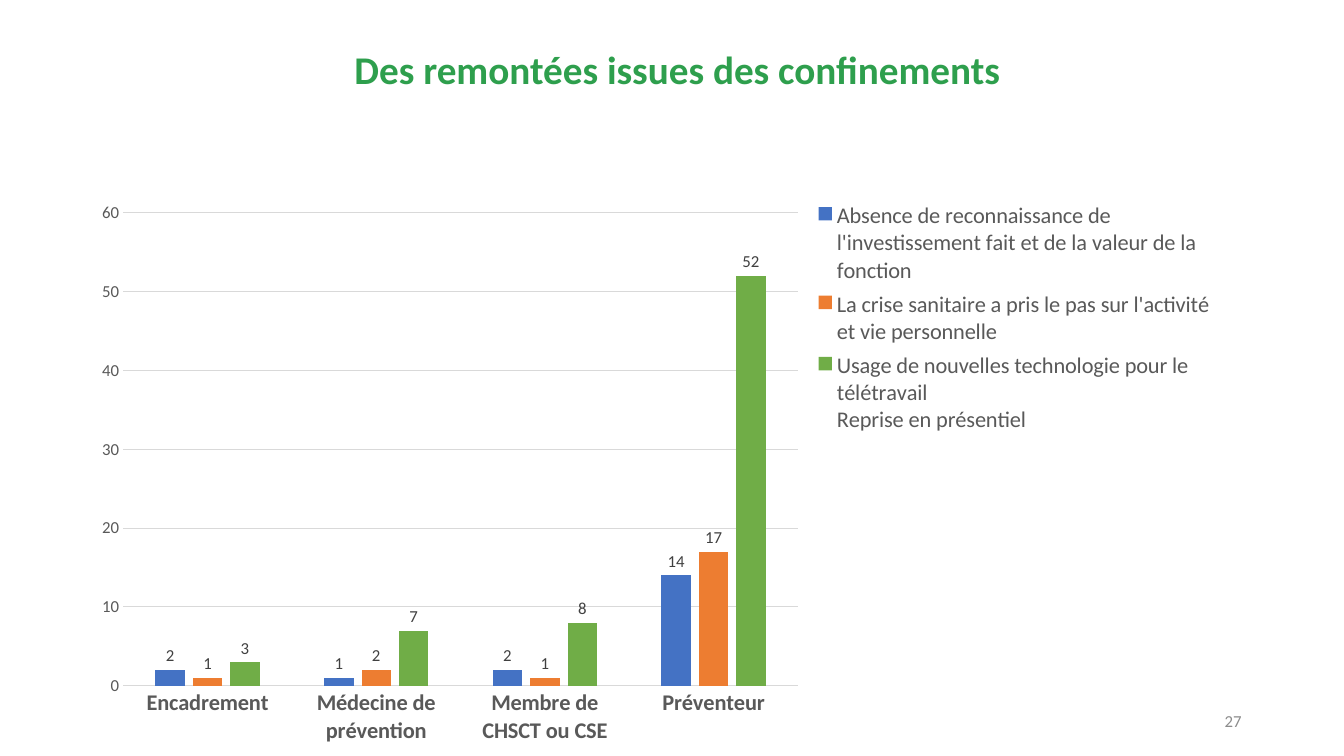
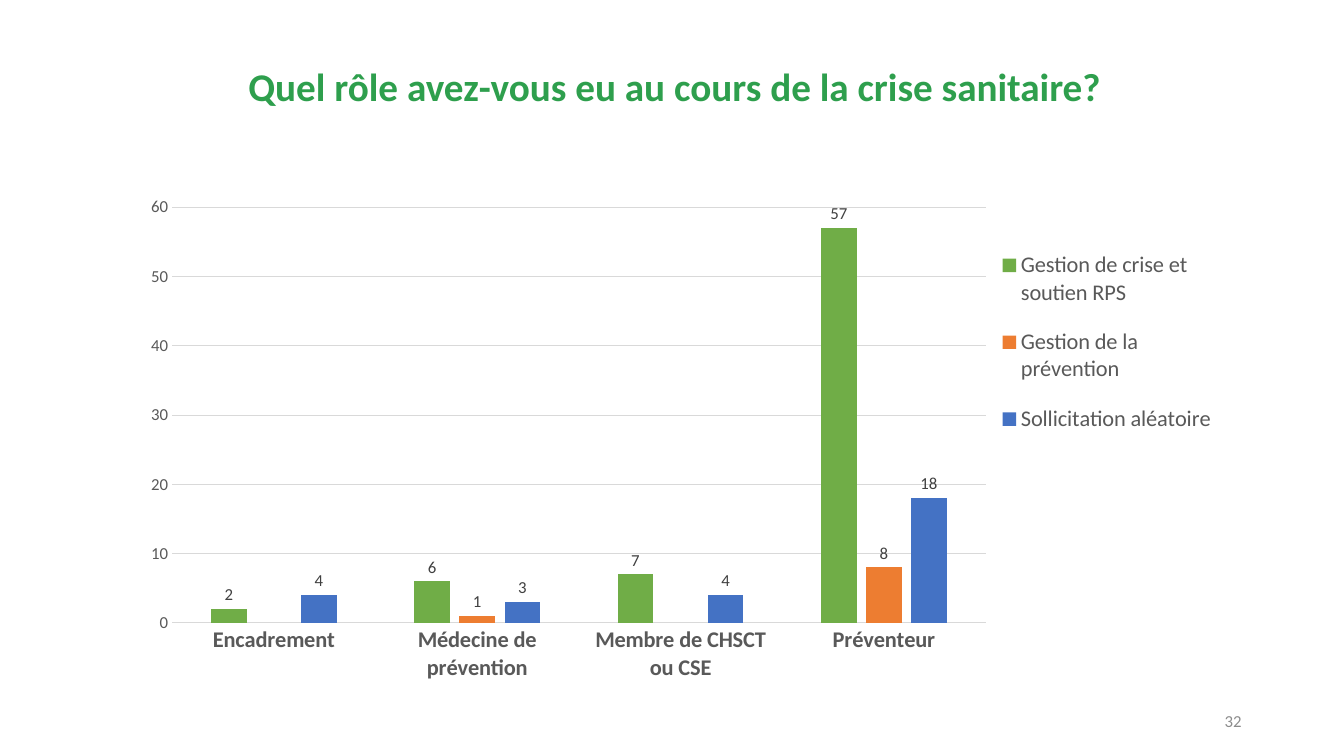
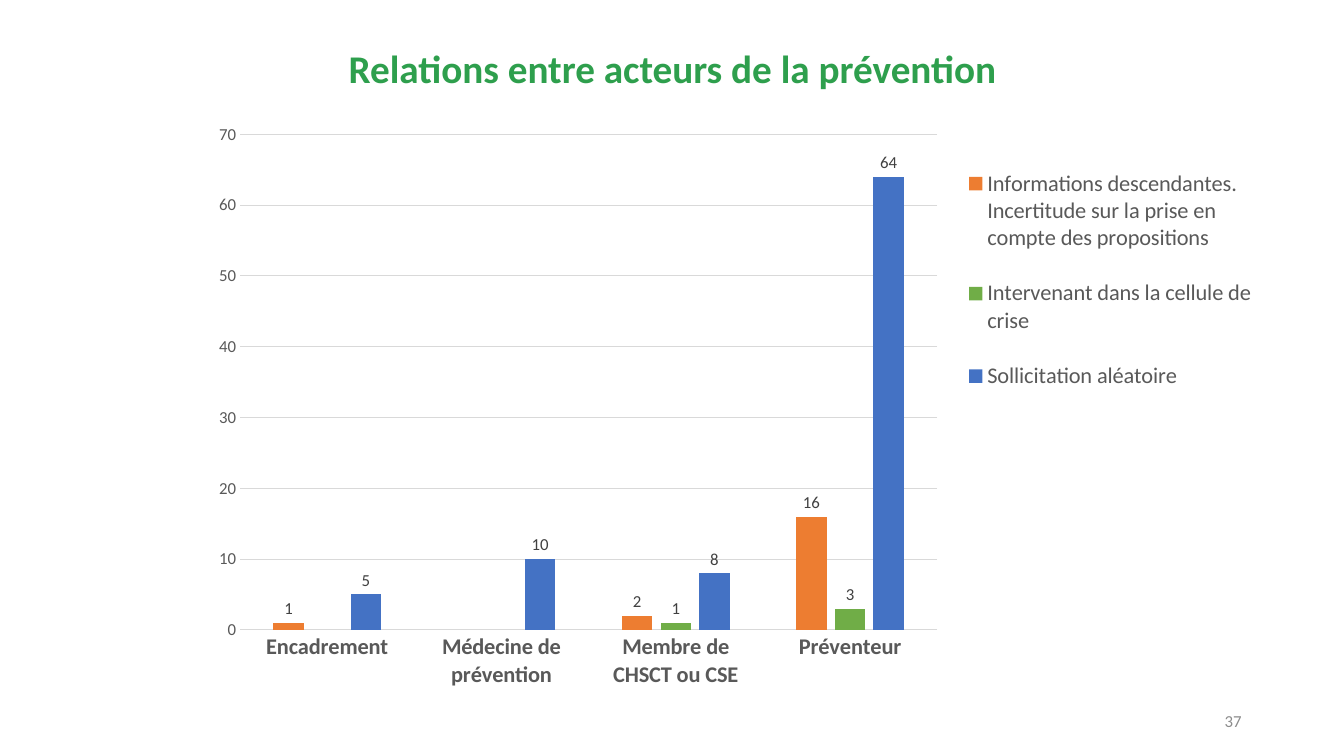
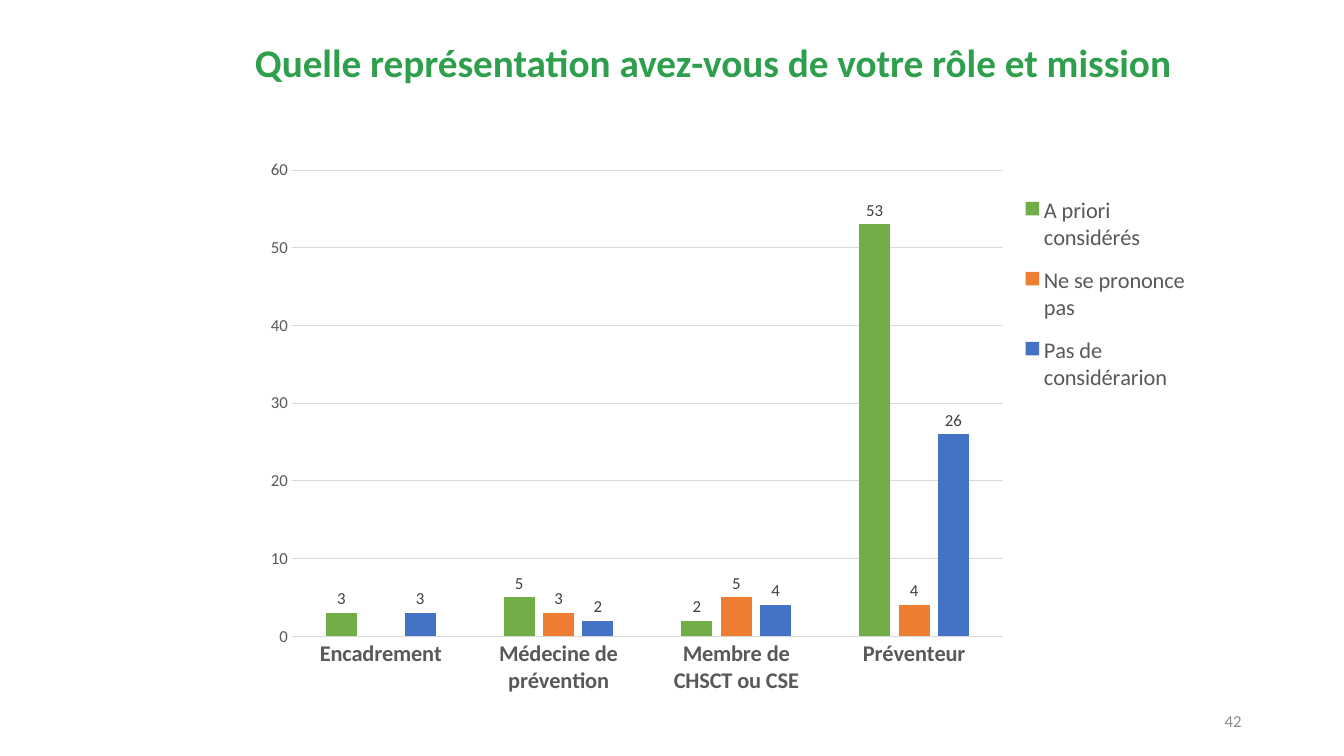
from dataclasses import dataclass

from lxml import etree
from pptx import Presentation
from pptx.chart.data import CategoryChartData
from pptx.dml.color import RGBColor
from pptx.enum.chart import XL_CHART_TYPE as ChartType
from pptx.enum.chart import XL_LABEL_POSITION as LabelPosition
from pptx.enum.chart import XL_LEGEND_POSITION as LegendPosition
from pptx.enum.chart import XL_TICK_MARK as TickMark
from pptx.enum.text import MSO_ANCHOR as Anchor
from pptx.enum.text import MSO_AUTO_SIZE as AutoSize
from pptx.enum.text import PP_ALIGN as Align
from pptx.oxml.ns import qn
from pptx.util import Pt


# Theme: colours, font and type sizes
@dataclass(frozen=True)
class Theme:
    font: str = "Calibri"
    title: str = "2E9F4D"
    text: str = "595959"
    label: str = "404040"
    number: str = "8C8C8C"
    rule: str = "D9D9D9"
    blue: str = "4472C4"
    orange: str = "ED7D31"
    green: str = "70AD47"
    title_size: int = 28
    large_size: int = 16
    small_size: int = 12
    rule_width: float = 0.75


THEME = Theme()
CATEGORIES = ("Encadrement", "Médecine de prévention",
              "Membre de CHSCT ou CSE", "Préventeur")
NUMBER_BOX = (678, 500.5, 216, 29)


class Deck:
    """Holds the style and the slide being built."""

    def __init__(self, theme):
        self.theme = theme
        self.presentation = Presentation()
        self.presentation.slide_width = Pt(960)
        self.presentation.slide_height = Pt(540)
        self.slide = None

    def add_slide(self):
        layout = self.presentation.slide_layouts[5]
        self.slide = self.presentation.slides.add_slide(layout)

    def style_font(self, font, size, color, bold=False):
        font.name = self.theme.font
        font.size = Pt(size)
        font.bold = bold
        font.color.rgb = RGBColor.from_string(color)

    def style_line(self, line):
        line.color.rgb = RGBColor.from_string(self.theme.rule)
        line.width = Pt(self.theme.rule_width)

    def set_text(self, shape, text, align, size, color, bold=False):
        frame = shape.text_frame
        frame.text = text
        frame.word_wrap = True
        frame.auto_size = AutoSize.NONE
        frame.vertical_anchor = Anchor.MIDDLE
        paragraph = frame.paragraphs[0]
        paragraph.alignment = align
        self.style_font(paragraph.runs[0].font, size, color, bold)
        return paragraph

    def title(self, text, box):
        shape = self.slide.shapes.title
        shape.left, shape.top, shape.width, shape.height = map(Pt, box)
        paragraph = self.set_text(shape, text, Align.CENTER,
                                  self.theme.title_size, self.theme.title,
                                  True)
        paragraph.line_spacing = 0.9

    def number(self, value):
        shape = self.slide.shapes.add_textbox(*map(Pt, NUMBER_BOX))
        self.set_text(shape, str(value), Align.RIGHT,
                      self.theme.small_size, self.theme.number)

    def place(self, follower, box, chart_box, inner=False):
        """Set a manual layout, as fractions of the chart, before follower."""
        parent = follower.getparent()
        for old in parent.findall(qn("c:layout")):
            parent.remove(old)
        layout = etree.Element(qn("c:layout"))
        manual = etree.SubElement(layout, qn("c:manualLayout"))
        left, top, width, height = chart_box
        settings = [("layoutTarget", "inner")] if inner else []
        settings += [("xMode", "edge"), ("yMode", "edge"),
                     ("x", (box[0] - left) / width),
                     ("y", (box[1] - top) / height),
                     ("w", box[2] / width), ("h", box[3] / height)]
        for tag, value in settings:
            etree.SubElement(manual, qn(f"c:{tag}")).set("val", str(value))
        follower.addprevious(layout)

    def column_chart(self, box, plot_box, legend_box, series):
        theme = self.theme
        data = CategoryChartData()
        data.categories = CATEGORIES
        for name, color, values in series:
            data.add_series(name, values)
        chart = self.slide.shapes.add_chart(
            ChartType.COLUMN_CLUSTERED, *map(Pt, box), data).chart
        chart.has_title = False
        chart.font.name = theme.font

        # Columns and their labels
        plot = chart.plots[0]
        plot.gap_width = 219
        plot.overlap = -27
        plot.vary_by_categories = False
        for column, (name, color, values) in zip(plot.series, series):
            column.format.fill.solid()
            column.format.fill.fore_color.rgb = RGBColor.from_string(color)
        plot.has_data_labels = True
        labels = plot.data_labels
        labels.show_value = True
        labels.position = LabelPosition.OUTSIDE_END
        self.style_font(labels.font, theme.small_size, theme.label)

        # Axes
        for axis, size, bold in (
                (chart.category_axis, theme.large_size, True),
                (chart.value_axis, theme.small_size, False)):
            axis.major_tick_mark = axis.minor_tick_mark = TickMark.NONE
            self.style_font(axis.tick_labels.font, size, theme.text, bold)
        self.style_line(chart.category_axis.format.line)
        chart.value_axis.format.line.fill.background()
        chart.value_axis.has_major_gridlines = True
        self.style_line(chart.value_axis.major_gridlines.format.line)

        # Legend and layout
        chart.has_legend = True
        legend = chart.legend
        legend.position = LegendPosition.RIGHT
        legend.include_in_layout = False
        self.style_font(legend.font, theme.large_size, theme.text)
        root = chart.element
        self.place(next(root.iter(qn("c:barChart"))), plot_box, box, True)
        self.place(root.find(".//" + qn("c:legend")).find(qn("c:overlay")),
                   legend_box, box)


# Content: boxes are left, top, width, height in points
SLIDES = (
    dict(
        number=27,
        title="Des remontées issues des confinements",
        title_box=(113, 19.5, 741.5, 63.5),
        chart_box=(57, 137.5, 816, 402.5),
        plot_box=(88, 152, 482, 338),
        legend_box=(589, 140, 284, 175),
        series=(
            ("Absence de reconnaissance de l'investissement fait et de la "
             "valeur de la fonction", THEME.blue, (2, 1, 2, 14)),
            ("La crise sanitaire a pris le pas sur l'activité et vie "
             "personnelle", THEME.orange, (1, 2, 1, 17)),
            ("Usage de nouvelles technologie pour le télétravail\n"
             "Reprise en présentiel", THEME.green, (3, 7, 8, 52)),
        ),
    ),
    dict(
        number=32,
        title="Quel rôle avez-vous eu au cours de la crise sanitaire?",
        title_box=(168.5, 29, 626.5, 69),
        chart_box=(92, 133, 793.5, 361),
        plot_box=(123, 148, 581, 297),
        legend_box=(709, 164, 163, 161),
        series=(
            ("Gestion de crise et soutien RPS", THEME.green, (2, 6, 7, 57)),
            ("Gestion de la prévention", THEME.orange, (None, 1, None, 8)),
            ("Sollicitation aléatoire", THEME.blue, (4, 3, 4, 18)),
        ),
    ),
    dict(
        number=37,
        title="Relations entre acteurs de la prévention",
        title_box=(167, 20, 626.5, 60.5),
        chart_box=(142, 80.5, 761, 419),
        plot_box=(171.5, 96, 498, 354),
        legend_box=(686, 101.5, 214, 197),
        series=(
            ("Informations descendantes.\nIncertitude sur la prise en compte "
             "des propositions", THEME.orange, (1, None, 2, 16)),
            ("Intervenant dans la cellule de crise", THEME.green,
             (None, None, 1, 3)),
            ("Sollicitation aléatoire", THEME.blue, (5, 10, 8, 64)),
        ),
    ),
    dict(
        number=42,
        title="Quelle représentation avez-vous de votre rôle et mission",
        title_box=(130.5, 24, 757.5, 44.5),
        chart_box=(180, 106.5, 679.5, 397.5),
        plot_box=(208.5, 121.5, 508, 333),
        legend_box=(725, 130, 129, 161),
        series=(
            ("A priori considérés", THEME.green, (3, 5, 2, 53)),
            ("Ne se prononce pas", THEME.orange, (None, 3, 5, 4)),
            ("Pas de considérarion", THEME.blue, (3, 2, 4, 26)),
        ),
    ),
)


def main():
    deck = Deck(THEME)
    for content in SLIDES:
        deck.add_slide()
        deck.title(content["title"], content["title_box"])
        deck.column_chart(content["chart_box"], content["plot_box"],
                          content["legend_box"], content["series"])
        deck.number(content["number"])
    deck.presentation.save("out.pptx")


if __name__ == "__main__":
    main()
